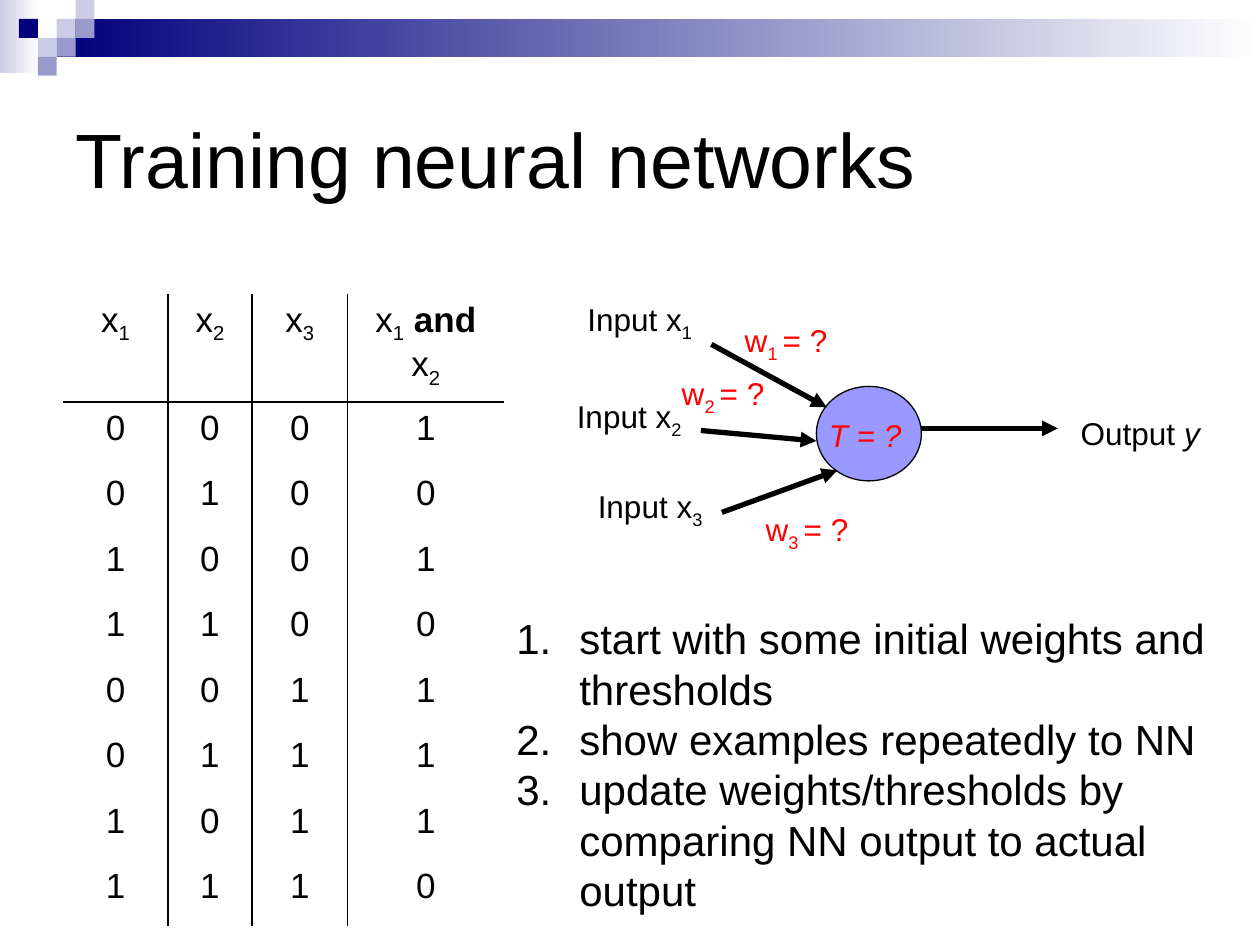
from lxml.etree import SubElement
from pptx import Presentation
from pptx.dml.color import RGBColor
from pptx.enum.shapes import MSO_CONNECTOR, MSO_SHAPE
from pptx.enum.text import MSO_ANCHOR, MSO_AUTO_SIZE, PP_ALIGN
from pptx.oxml import parse_xml
from pptx.oxml.ns import nsdecls, qn
from pptx.util import Inches, Pt

BLACK, RED = "000000", "FF0000"
NAVY, PALE, LILAC, WHITE = "00007D", "CCCCE6", "9999CC", "FFFFFF"
TILE = 1.8
STEPS = [
    "start with some initial weights and thresholds",
    "show examples repeatedly to NN",
    "update weights/thresholds by comparing NN output to actual output",
]
TRUTH_ROWS = ["0001", "0100", "1001", "1100", "0011", "0111", "1011", "1110"]


def grid(*cells):
    return [Inches(cell / 12) for cell in cells]


def color(hex_code):
    return RGBColor.from_string(hex_code)


def add_runs(paragraph, runs, size, hex_code=BLACK):
    for text, style in runs:
        run = paragraph.add_run()
        run.text = text
        run.font.name = "Arial"
        run.font.size = Pt(size)
        run.font.color.rgb = color(hex_code)
        if style == "bold":
            run.font.bold = True
        elif style == "italic":
            run.font.italic = True
        elif style == "sub":
            run.font._element.set("baseline", "-25000")


def indexed(letter, index):
    return [(letter, ""), (index, "sub")]


def add_block(slide, place, fill, fade_to=None, outline=None, preset=MSO_SHAPE.RECTANGLE):
    block = slide.shapes.add_shape(preset, *grid(*place))
    block.shadow.inherit = False
    if fade_to:
        block.fill.gradient()
        block.fill.gradient_angle = 0
        for stop, shade in zip(block.fill.gradient_stops, (fill, fade_to)):
            stop.color.rgb = color(shade)
    else:
        block.fill.solid()
        block.fill.fore_color.rgb = color(fill)
    if outline:
        block.line.color.rgb = color(outline)
        block.line.width = Pt(0.75)
    else:
        block.line.fill.background()


def add_banner(slide):
    add_block(slide, (0, 0, 3.75, 7), PALE, WHITE)
    add_block(slide, (3 * TILE, TILE, 120 - 3 * TILE, 2 * TILE), NAVY, WHITE)
    tiles = [(3, 1, PALE), (4, 0, PALE), (4, 1, LILAC), (2, 2, PALE),
             (1, 1, NAVY), (3, 2, LILAC), (2, 3, LILAC)]
    for column, row, shade in tiles:
        add_block(slide, (column * TILE, row * TILE, TILE, TILE), shade)


def add_title(slide, text):
    title = slide.shapes.title
    title.left, title.top, title.width, title.height = grid(6, 6, 108, 18)
    title.text_frame.vertical_anchor = MSO_ANCHOR.MIDDLE
    paragraph = title.text_frame.paragraphs[0]
    paragraph.alignment = PP_ALIGN.LEFT
    add_runs(paragraph, [(text, "")], 44)


def add_text_frame(slide, place):
    frame = slide.shapes.add_textbox(*grid(*place)).text_frame
    frame.word_wrap = True
    frame.auto_size = MSO_AUTO_SIZE.SHAPE_TO_FIT_TEXT
    return frame


def add_label(slide, left, top, width, runs, hex_code=BLACK):
    frame = add_text_frame(slide, (left, top, width, 4.8))
    add_runs(frame.paragraphs[0], runs, 18, hex_code)


def add_arrow(slide, start, end):
    arrow = slide.shapes.add_connector(MSO_CONNECTOR.STRAIGHT, *grid(*start, *end))
    arrow.line.color.rgb = color(BLACK)
    arrow.line.width = Pt(3)
    SubElement(arrow.line._get_or_add_ln(), qn("a:tailEnd"), type="triangle")
    SubElement(arrow._element.spPr, qn("a:effectLst"))


def add_neuron(slide):
    add_block(slide, (77.75, 36.8, 10, 9), "9999FF", outline=BLACK, preset=MSO_SHAPE.OVAL)
    add_label(slide, 77.75, 39, 21, [("T = ?", "italic")], RED)
    add_arrow(slide, (87.75, 40.8), (100.75, 40.8))
    add_label(slide, 101.75, 38.8, 18, [("Output ", ""), ("y", "italic")])
    inputs = [
        ("1", (54.75, 28), (69.75, 30), (67.75, 32.8), (78.75, 38.8)),
        ("2", (53.75, 37.2), (63.75, 35), (66.75, 41), (77.75, 42)),
        ("3", (55.75, 45.8), (71.75, 48), (68.75, 48.8), (79.75, 44.8)),
    ]
    for index, name_at, weight_at, start, end in inputs:
        add_arrow(slide, start, end)
        add_label(slide, *name_at, 15, indexed("Input x", index))
        add_label(slide, *weight_at, 18, indexed("w", index + " ") + [("= ?", "")], RED)


def set_borders(cell, drawn_edges):
    properties = cell._tc.get_or_add_tcPr()
    for position, edge in enumerate("LRTB"):
        if edge in drawn_edges:
            paint = f'<a:solidFill><a:srgbClr val="{BLACK}"/></a:solidFill>'
        else:
            paint = "<a:noFill/>"
        border = parse_xml(f'<a:ln{edge} {nsdecls("a")} w="12700">{paint}</a:ln{edge}>')
        properties.insert(position, border)


def add_truth_table(slide):
    header = [indexed("x", index) for index in "123"]
    header.append(indexed("x", "1") + [(" and ", "bold")] + indexed("x", "2"))
    rows = [header] + [[[(digit, "")] for digit in row] for row in TRUTH_ROWS]
    widths = grid(10, 8, 9.12, 14.88)
    table = slide.shapes.add_table(len(rows), len(widths), *grid(6, 28, 42, 55.8)).table
    table.first_row = table.horz_banding = False
    for column, width in zip(table.columns, widths):
        column.width = width
    last = len(widths) - 1
    for r, row in enumerate(rows):
        table.rows[r].height = Inches(0.52)
        for c, runs in enumerate(row):
            cell = table.cell(r, c)
            cell.fill.background()
            paragraph = cell.text_frame.paragraphs[0]
            paragraph.alignment = PP_ALIGN.CENTER
            add_runs(paragraph, runs, 20)
            edges = ("L" if c > 0 else "") + ("R" if c < last else "")
            set_borders(cell, edges + {0: "B", 1: "T"}.get(r, ""))


def add_steps(slide):
    frame = add_text_frame(slide, (48, 57.75, 73, 30.25))
    for number, step in enumerate(STEPS):
        paragraph = frame.add_paragraph() if number else frame.paragraphs[0]
        properties = paragraph._p.get_or_add_pPr()
        properties.set("marL", str(Inches(0.5)))
        properties.set("indent", str(-Inches(0.5)))
        SubElement(properties, qn("a:buAutoNum"), type="arabicPeriod")
        add_runs(paragraph, [(step, "")], 24)


def main():
    deck = Presentation()
    deck.slide_width, deck.slide_height = grid(120, 90)
    slide = deck.slides.add_slide(deck.slide_layouts[5])
    add_banner(slide)
    add_title(slide, "Training neural networks")
    add_neuron(slide)
    add_truth_table(slide)
    add_steps(slide)
    deck.save("out.pptx")


if __name__ == "__main__":
    main()
